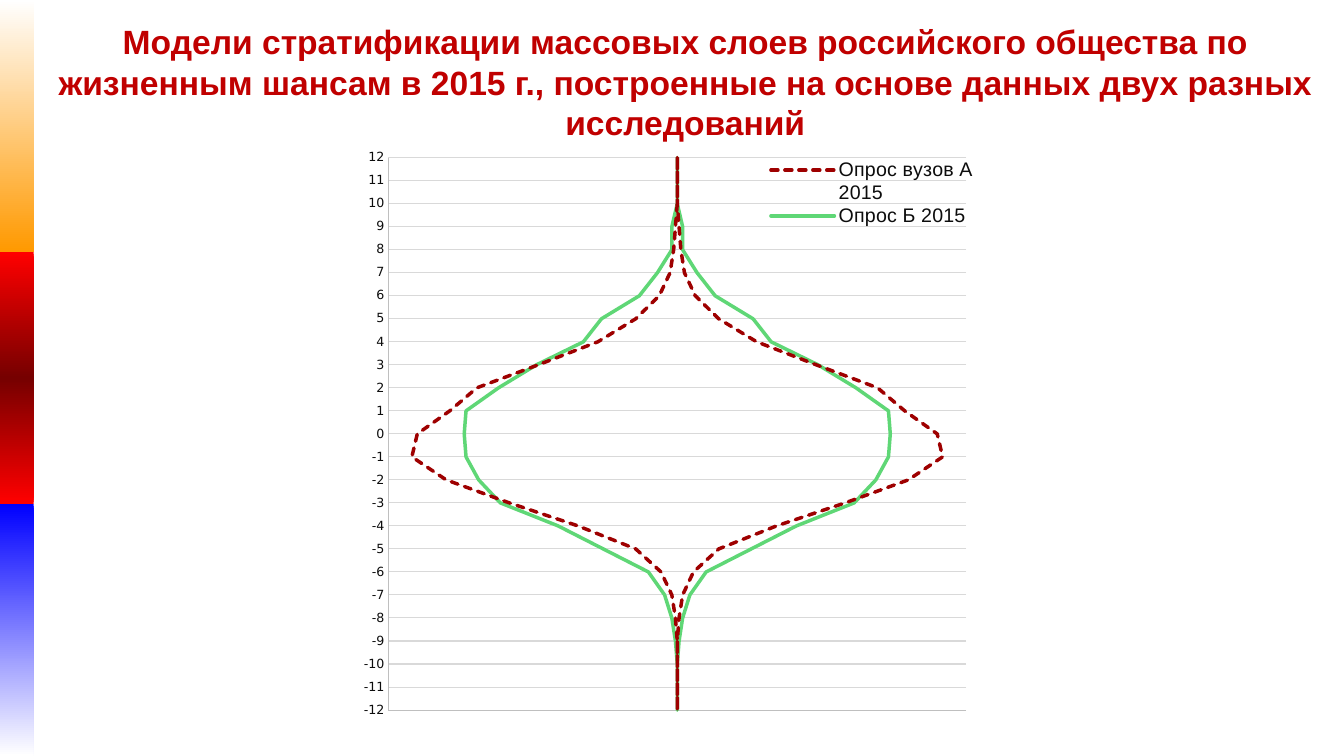
import dataclasses
import typing

import lxml.etree
import pptx
import pptx.chart.data
import pptx.dml.color
import pptx.enum.chart
import pptx.enum.dml
import pptx.enum.shapes
import pptx.enum.text
import pptx.oxml.ns
import pptx.util

Cm = pptx.util.Cm
Pt = pptx.util.Pt
qn = pptx.oxml.ns.qn

COLORS = {
    "white": "FFFFFF", "orange": "FF9900", "red": "FF0000", "maroon": "760000",
    "blue": "0000FF", "title": "C00000", "text": "0D0D0D", "axis": "BFBFBF",
    "grid": "D9D9D9", "dark_red": "9E0000", "green": "5FD776",
}
TITLE = ("Модели стратификации массовых слоев российского общества по жизненным "
         "шансам в 2015 г., построенные на основе данных двух разных исследований")
TOP = 12
BAND_HEIGHT = 6.35


@dataclasses.dataclass
class Band:
    stops: list[str]


@dataclasses.dataclass
class Profile:
    name: str
    color: str
    dash: typing.Any
    half_widths: list[float]


BANDS = [
    Band(["white", "orange"]),
    Band(["red", "maroon", "red"]),
    Band(["blue", "white"]),
]
PROFILES = [
    Profile("Опрос вузов А 2015", "dark_red", pptx.enum.dml.MSO_LINE.SQUARE_DOT,
            [0, 0, 0, 0.1, 0.2, 0.4, 1, 2.3, 4.4, 7.7, 11.1, 12.6, 14.4,
             14.7, 12.8, 9.3, 5.5, 2.3, 0.9, 0.3, 0.1, 0, 0, 0, 0]),
    Profile("Опрос Б 2015", "green", pptx.enum.dml.MSO_LINE.SOLID,
            [0, 0, 0, 0.3, 0.3, 1.1, 2.1, 4.2, 5.2, 7.8, 9.9, 11.7, 11.8,
             11.7, 11, 9.8, 6.6, 4.1, 1.6, 0.7, 0.3, 0.1, 0, 0, 0]),
]


def rgb(name: str) -> pptx.dml.color.RGBColor:
    return pptx.dml.color.RGBColor.from_string(COLORS[name])


def set_format(obj: typing.Any, values: dict[str, typing.Any]) -> None:
    for key, value in values.items():
        setattr(obj, key, value)


def set_font(font: typing.Any, name: str, size: float, color: str, bold: bool = False) -> None:
    set_format(font, {"name": name, "size": Pt(size), "bold": bold})
    font.color.rgb = rgb(color)


def set_line(line: typing.Any, color: str, width: float) -> None:
    line.color.rgb = rgb(color)
    line.width = Pt(width)


def set_layout(parent: typing.Any, values: dict[str, typing.Any]) -> None:
    layout = parent.find(qn("c:layout"))
    if layout is None:
        layout = lxml.etree.Element(qn("c:layout"))
        position = parent.find(qn("c:legendPos"))
        if position is None:
            parent.insert(0, layout)
        else:
            position.addnext(layout)
    for child in list(layout):
        layout.remove(child)
    manual = lxml.etree.SubElement(layout, qn("c:manualLayout"))
    for key, value in values.items():
        lxml.etree.SubElement(manual, qn(f"c:{key}")).set("val", str(value))


def add_band(slide: typing.Any, index: int, band: Band) -> None:
    sp = slide.shapes.add_shape(pptx.enum.shapes.MSO_SHAPE.RECTANGLE, 0,
                                Cm(index * BAND_HEIGHT), Cm(0.85), Cm(BAND_HEIGHT))
    sp.shadow.inherit = False
    sp.line.fill.background()
    sp.fill.gradient()
    sp.fill.gradient_angle = 270
    stops = sp._element.spPr.find(".//" + qn("a:gsLst"))
    for child in list(stops):
        stops.remove(child)
    for i, color in enumerate(band.stops):
        gs = lxml.etree.SubElement(stops, qn("a:gs"))
        gs.set("pos", str(i * 100000 // (len(band.stops) - 1)))
        lxml.etree.SubElement(gs, qn("a:srgbClr")).set("val", COLORS[color])


def add_title(slide: typing.Any) -> None:
    tf = slide.shapes.add_textbox(Cm(1.17), Cm(1.42), Cm(32.2), Cm(2.29)).text_frame
    set_format(tf, {"word_wrap": True,
                    "auto_size": pptx.enum.text.MSO_AUTO_SIZE.NONE,
                    "vertical_anchor": pptx.enum.text.MSO_ANCHOR.BOTTOM})
    p = tf.paragraphs[0]
    p.alignment = pptx.enum.text.PP_ALIGN.CENTER
    r = p.add_run()
    r.text = TITLE
    set_font(r.font, "Arial", 24, "title", True)


def format_axis(axis: typing.Any, limit: float, labels: typing.Any, grid: bool) -> None:
    none = pptx.enum.chart.XL_TICK_MARK.NONE
    set_format(axis, {
        "minimum_scale": -limit, "maximum_scale": limit, "major_unit": 1,
        "major_tick_mark": none, "minor_tick_mark": none,
        "tick_label_position": labels, "has_major_gridlines": grid,
        "crosses": pptx.enum.chart.XL_AXIS_CROSSES.MINIMUM,
    })
    set_font(axis.tick_labels.font, "DejaVu Sans", 9, "text")
    set_line(axis.format.line, "axis", 0.75)
    if grid:
        set_line(axis.major_gridlines.format.line, "grid", 0.75)


def add_profiles(slide: typing.Any) -> None:
    data = pptx.chart.data.XyChartData(number_format="#,##0")
    levels = list(range(TOP, -TOP - 1, -1))
    for profile in PROFILES:
        series = data.add_series(profile.name)
        right = list(zip(profile.half_widths, levels))
        left = [(-x, y) for x, y in reversed(right)]
        for x, y in right + left + right[:1]:
            series.add_data_point(x, y)
    chart = slide.shapes.add_chart(
        pptx.enum.chart.XL_CHART_TYPE.XY_SCATTER_LINES_NO_MARKERS,
        Cm(8.97), Cm(3.53), Cm(16.36), Cm(14.81), data).chart
    set_format(chart, {"has_title": False, "has_legend": True})
    set_font(chart.font, "DejaVu Sans", 10, "text")
    set_format(chart.legend, {"position": pptx.enum.chart.XL_LEGEND_POSITION.TOP,
                              "include_in_layout": False})
    set_font(chart.legend.font, "Arial", 14, "text")
    position = pptx.enum.chart.XL_TICK_LABEL_POSITION
    format_axis(chart.category_axis, 16, position.NONE, False)
    format_axis(chart.value_axis, TOP, position.NEXT_TO_AXIS, True)
    plot = chart.plots[0]
    plot.vary_by_categories = False
    for series, profile in zip(plot.series, PROFILES):
        set_line(series.format.line, profile.color, 2.5)
        series.format.line.dash_style = profile.dash
        series._element.find(".//" + qn("a:ln")).set("cap", "rnd")
    edges = {"xMode": "edge", "yMode": "edge"}
    set_layout(chart._chartSpace.chart.plotArea,
               {"layoutTarget": "inner", **edges,
                "x": 0.05, "y": 0.03, "w": 0.89, "h": 0.94})
    set_layout(chart.legend._element,
               {**edges, "x": 0.61, "y": 0.03, "w": 0.37, "h": 0.12})


def main() -> None:
    prs = pptx.Presentation()
    set_format(prs, {"slide_width": Cm(33.87), "slide_height": Cm(19.05)})
    slide = prs.slides.add_slide(prs.slide_layouts[6])
    for index, band in enumerate(BANDS):
        add_band(slide, index, band)
    add_title(slide)
    add_profiles(slide)
    prs.save("out.pptx")


if __name__ == "__main__":
    main()
